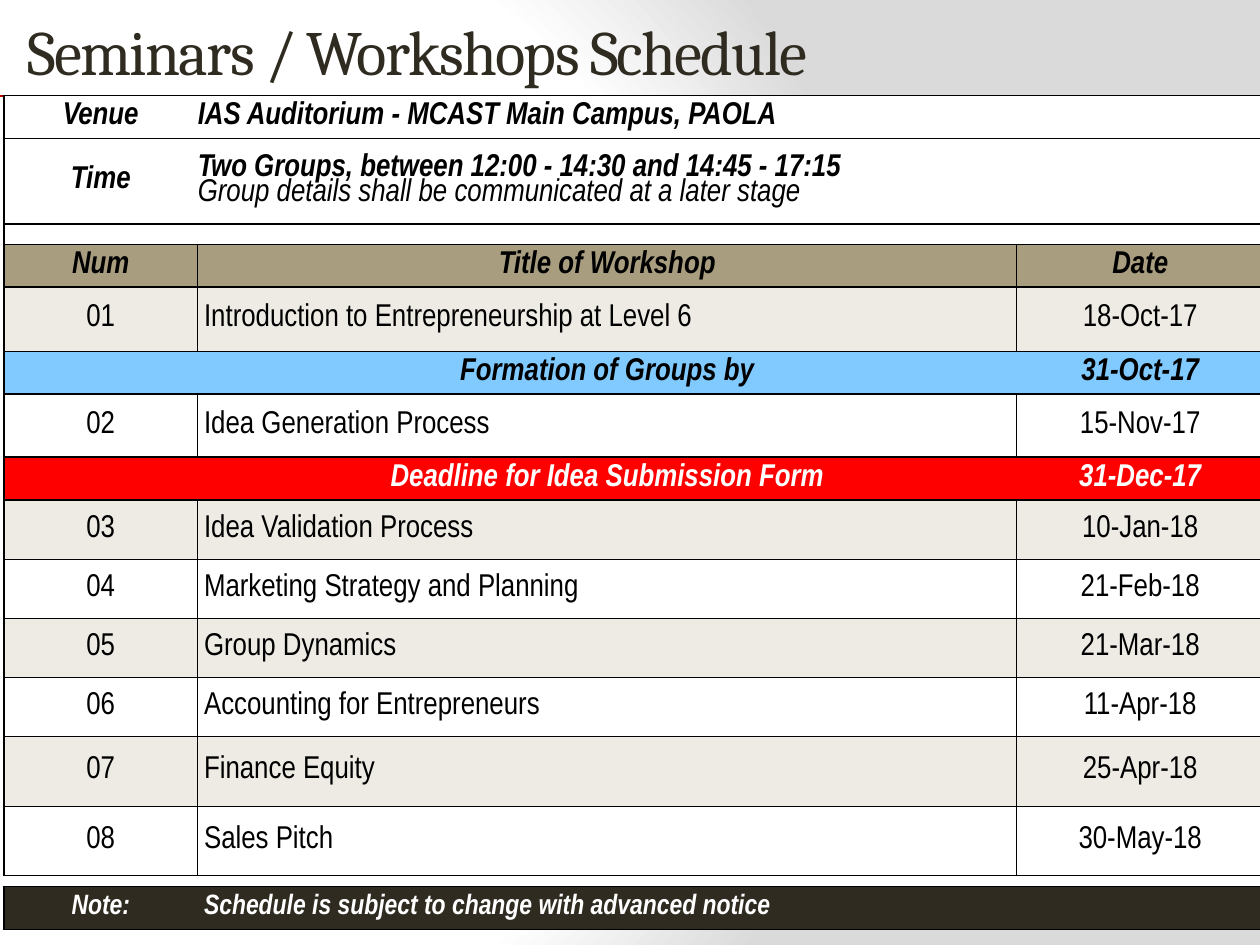
from lxml import etree
from pptx import Presentation
from pptx.dml.color import RGBColor
from pptx.enum.shapes import MSO_CONNECTOR
from pptx.enum.text import MSO_ANCHOR, PP_ALIGN
from pptx.oxml import parse_xml
from pptx.oxml.ns import nsdecls, qn
from pptx.util import Inches, Pt

STRAIGHT = MSO_CONNECTOR.STRAIGHT
MIDDLE = MSO_ANCHOR.MIDDLE
CENTER, LEFT = PP_ALIGN.CENTER, PP_ALIGN.LEFT

BLACK = RGBColor(0x00, 0x00, 0x00)
WHITE = RGBColor(0xFF, 0xFF, 0xFF)
DARK = RGBColor(0x2F, 0x2B, 0x20)
TAN = RGBColor(0xA8, 0x9D, 0x7F)
CREAM = RGBColor(0xEE, 0xEB, 0xE5)
BLUE = RGBColor(0x80, 0xCA, 0xFF)
RED = RGBColor(0xFF, 0x00, 0x00)
RULE_RED = RGBColor(0xBC, 0x00, 0x00)

NO_TABLE_STYLE = "{2D5ABB26-0587-4C30-8999-92F81FD0307C}"
GRADIENT_STOPS = ((0, WHITE), (75, WHITE), (100, RGBColor(0xDA, 0xDA, 0xDA)))
COLUMN_WIDTHS = (1.54, 6.5, 1.96)
STRONG = {"size": Pt(18), "name": "Arial Narrow", "bold": True, "italic": True}
PLAIN = STRONG | {"bold": False, "italic": False}
SOFT = STRONG | {"bold": False}
SMALL = STRONG | {"size": Pt(16)}

INFO = {"font": STRONG, "color": BLACK, "lines": (), "align": LEFT, "inset": 0}
HEADING = INFO | {"lines": (0.5, 0.5), "align": CENTER}
WORKSHOP = HEADING | {"font": PLAIN, "align": LEFT, "inset": 0.05}
MILESTONE = INFO | {"align": CENTER}
DEADLINE = MILESTONE | {"color": WHITE}
NOTE = INFO | {"font": SMALL, "color": WHITE, "inset": 0.05}

TIME_TEXT = ("Two Groups, between 12:00 - 14:30 and 14:45 - 17:15\n"
             "Group details shall be communicated at a later stage")
EMPTY = ("", "", "")
ROWS = (
    (INFO, WHITE, 0.34, 1, 0.5,
     ("Venue", "IAS Auditorium - MCAST Main Campus, PAOLA", "")),
    (INFO, WHITE, 0.68, 0.5, 1, ("Time", TIME_TEXT, "")),
    (INFO, WHITE, 0.16, 1, 1, EMPTY),
    (HEADING, TAN, 0.34, 1, 1, ("Num", "Title of Workshop", "Date")),
    (WORKSHOP, CREAM, 0.51, 1, 1,
     ("01", "Introduction to Entrepreneurship at Level 6", "18-Oct-17")),
    (MILESTONE, BLUE, 0.34, 1, 1, ("", "Formation of Groups by", "31-Oct-17")),
    (WORKSHOP, WHITE, 0.5, 1, 1, ("02", "Idea Generation Process", "15-Nov-17")),
    (DEADLINE, RED, 0.34, 1, 1,
     ("", "Deadline for Idea Submission Form", "31-Dec-17")),
    (WORKSHOP, CREAM, 0.47, 1, 0.5,
     ("03", "Idea Validation Process", "10-Jan-18")),
    (WORKSHOP, WHITE, 0.47, 0.5, 0.5,
     ("04", "Marketing Strategy and Planning", "21-Feb-18")),
    (WORKSHOP, CREAM, 0.47, 0.5, 0.5, ("05", "Group Dynamics", "21-Mar-18")),
    (WORKSHOP, WHITE, 0.47, 0.5, 0.5,
     ("06", "Accounting for Entrepreneurs", "11-Apr-18")),
    (WORKSHOP, CREAM, 0.55, 0.5, 0.5, ("07", "Finance Equity", "25-Apr-18")),
    (WORKSHOP, WHITE, 0.55, 0.5, 1, ("08", "Sales Pitch", "30-May-18")),
    (None, WHITE, 0.09, 1, 1, EMPTY),
    (NOTE, DARK, 0.34, 1, 1,
     ("Note:", "Schedule is subject to change with advanced notice", "")),
)


def apply_format(target, values):
    """Set each attribute of the target from a dict."""
    for name, value in values.items():
        setattr(target, name, value)


def paint_background(page):
    """Fill the page with a soft radial gradient."""
    page.background.fill.gradient()
    gradient = page._element.find(".//" + qn("a:gradFill"))
    stops = "".join(
        f'<a:gs pos="{position * 1000}"><a:srgbClr val="{color}"/></a:gs>'
        for position, color in GRADIENT_STOPS)
    gradient.getparent().replace(gradient, parse_xml(
        f'<a:gradFill {nsdecls("a")} rotWithShape="1"><a:gsLst>{stops}</a:gsLst>'
        '<a:path path="circle"><a:fillToRect l="20000" t="50000" '
        'r="100000" b="50000"/></a:path></a:gradFill>'))


def add_span(para, text, font, color):
    """Add one formatted span to a paragraph."""
    span = para.add_run()
    span.text = text
    apply_format(span.font, font)
    span.font.color.rgb = color
    return span


def add_title(page, text):
    """Add the page title with tightened letters."""
    box = page.shapes.add_textbox(Inches(0.12), Inches(0.12),
                                  Inches(8.72), Inches(0.55))
    apply_format(box.text_frame, {"word_wrap": True, "vertical_anchor": MIDDLE,
                                  "margin_top": 0, "margin_bottom": 0})
    span = add_span(box.text_frame.paragraphs[0], text,
                    {"size": Pt(36), "name": "Cambria"}, DARK)
    span._r.get_or_add_rPr().set("spc", "-100")


def add_rule(page):
    """Add the line under the title."""
    rule = page.shapes.add_connector(STRAIGHT, 0, Inches(0.76),
                                     Inches(10), Inches(0.76))
    rule.line.color.rgb = RULE_RED
    rule.line.width = Pt(1)
    etree.SubElement(rule._element.spPr, qn("a:effectLst"))


def set_borders(cell, widths):
    """Draw black borders in the order left, right, top, bottom."""
    properties = cell._tc.get_or_add_tcPr()
    for side, width in zip("LRTB", widths):
        fill = (f'<a:solidFill><a:srgbClr val="{BLACK}"/></a:solidFill>'
                if width else "<a:noFill/>")
        properties.append(parse_xml(
            f'<a:ln{side} {nsdecls("a")} w="{Pt(width)}">{fill}</a:ln{side}>'))


def write_cell(cell, text, style, align, inset):
    """Write the lines of a cell, the second one lighter."""
    para = cell.text_frame.paragraphs[0]
    if not text:
        etree.SubElement(para._p, qn("a:endParaRPr")).set("sz", "100")
        return
    cell.margin_left = Inches(inset)
    apply_format(para, {"alignment": align, "line_spacing": 0.85,
                        "space_after": Pt(6)})
    first, *others = text.split("\n")
    add_span(para, first, style["font"], style["color"])
    for line in others:
        para.add_line_break()
        add_span(para, line, SOFT, style["color"])


def fill_row(cells, style, fill, top, bottom, texts):
    """Fill, border and write one table row."""
    inner = style["lines"] if style and style["lines"] else (0, 0)
    outer = 1 if style else 0
    verticals = (outer, *inner, outer)
    for index, (cell, text) in enumerate(zip(cells, texts)):
        set_borders(cell, (verticals[index], verticals[index + 1], top, bottom))
        cell.fill.solid()
        cell.fill.fore_color.rgb = fill
        apply_format(cell, {"vertical_anchor": MIDDLE, "margin_left": 0,
                            "margin_right": 0, "margin_top": 0,
                            "margin_bottom": 0})
        middle = index == 1
        write_cell(cell, text, style, style["align"] if middle and style else CENTER,
                   style["inset"] if middle and style else 0)


def add_schedule(page):
    """Add the schedule table."""
    height = sum(row[2] for row in ROWS)
    frame = page.shapes.add_table(len(ROWS), len(COLUMN_WIDTHS), Inches(0.03),
                                  Inches(0.76), Inches(10), Inches(height))
    table = frame.table
    apply_format(table, {"first_row": False, "horz_banding": False})
    table._tbl.tblPr.find(qn("a:tableStyleId")).text = NO_TABLE_STYLE
    for column, width in zip(table.columns, COLUMN_WIDTHS):
        column.width = Inches(width)
    for row, (style, fill, tall, top, bottom, texts) in zip(table.rows, ROWS):
        row.height = Inches(tall)
        fill_row(row.cells, style, fill, top, bottom, texts)


def main():
    """Build and save the schedule page."""
    deck = Presentation()
    deck.slide_width, deck.slide_height = Inches(10), Inches(7.5)
    page = deck.slides.add_slide(deck.slide_layouts[6])
    paint_background(page)
    add_title(page, "Seminars / Workshops Schedule")
    add_rule(page)
    add_schedule(page)
    deck.save("out.pptx")


if __name__ == "__main__":
    main()
